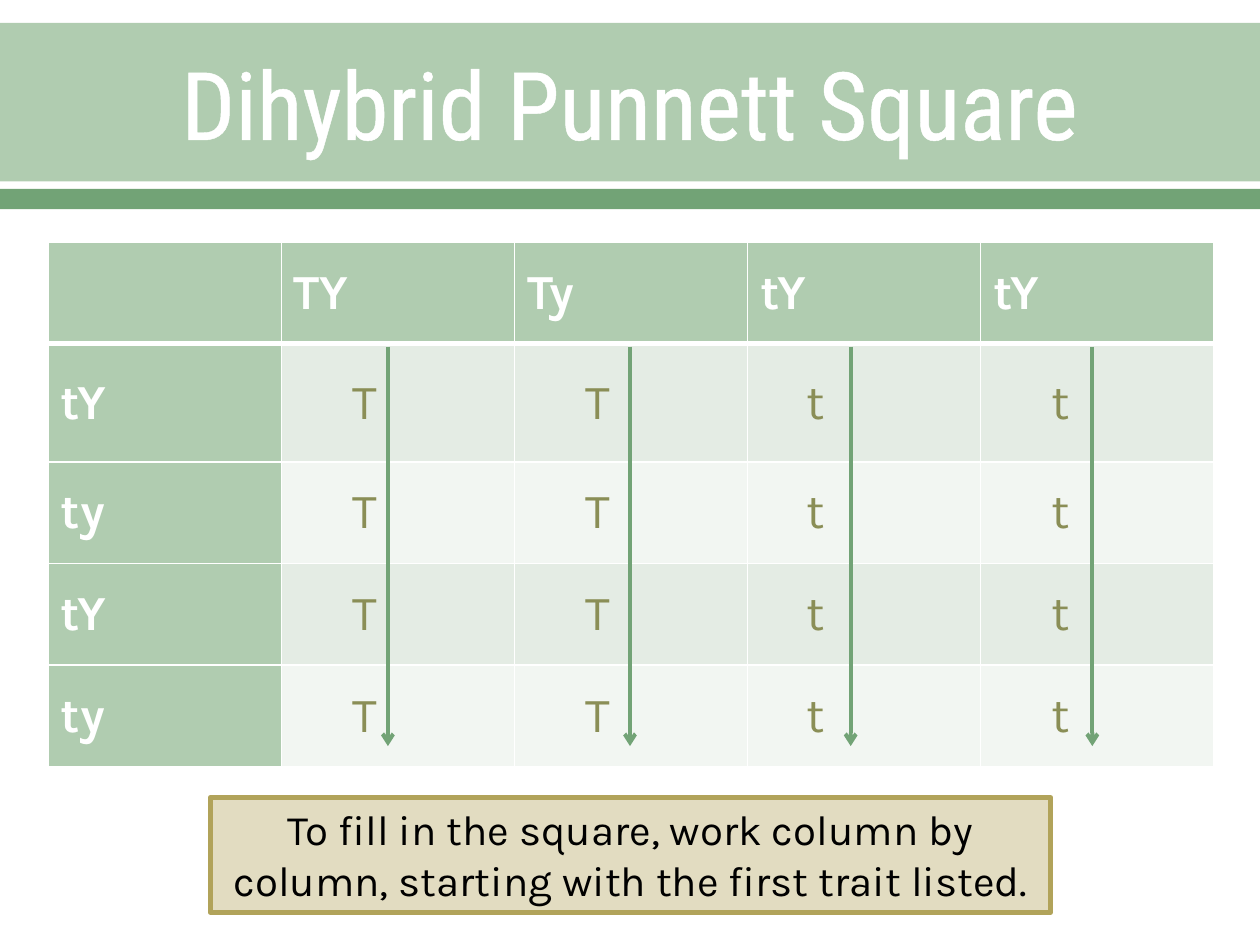
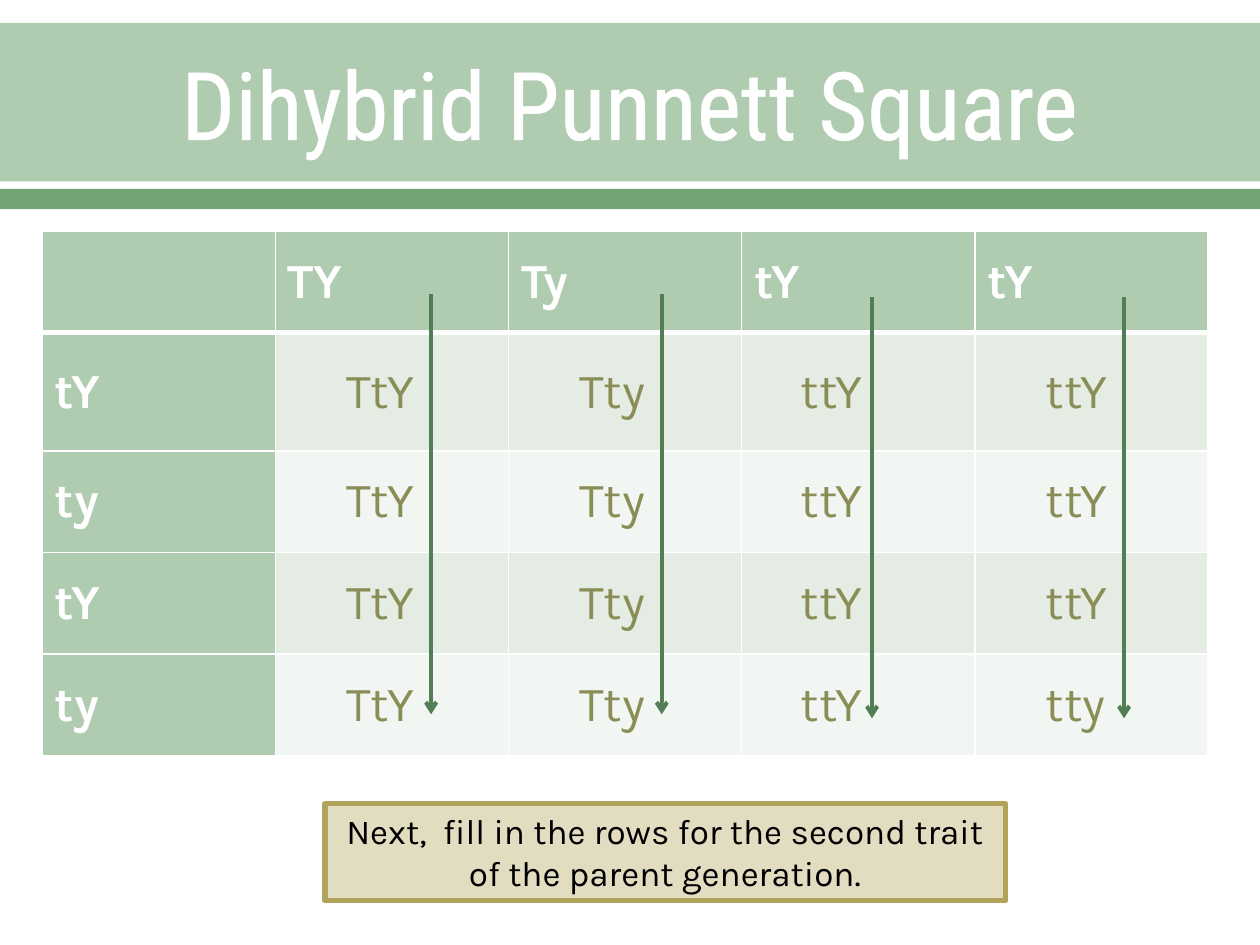
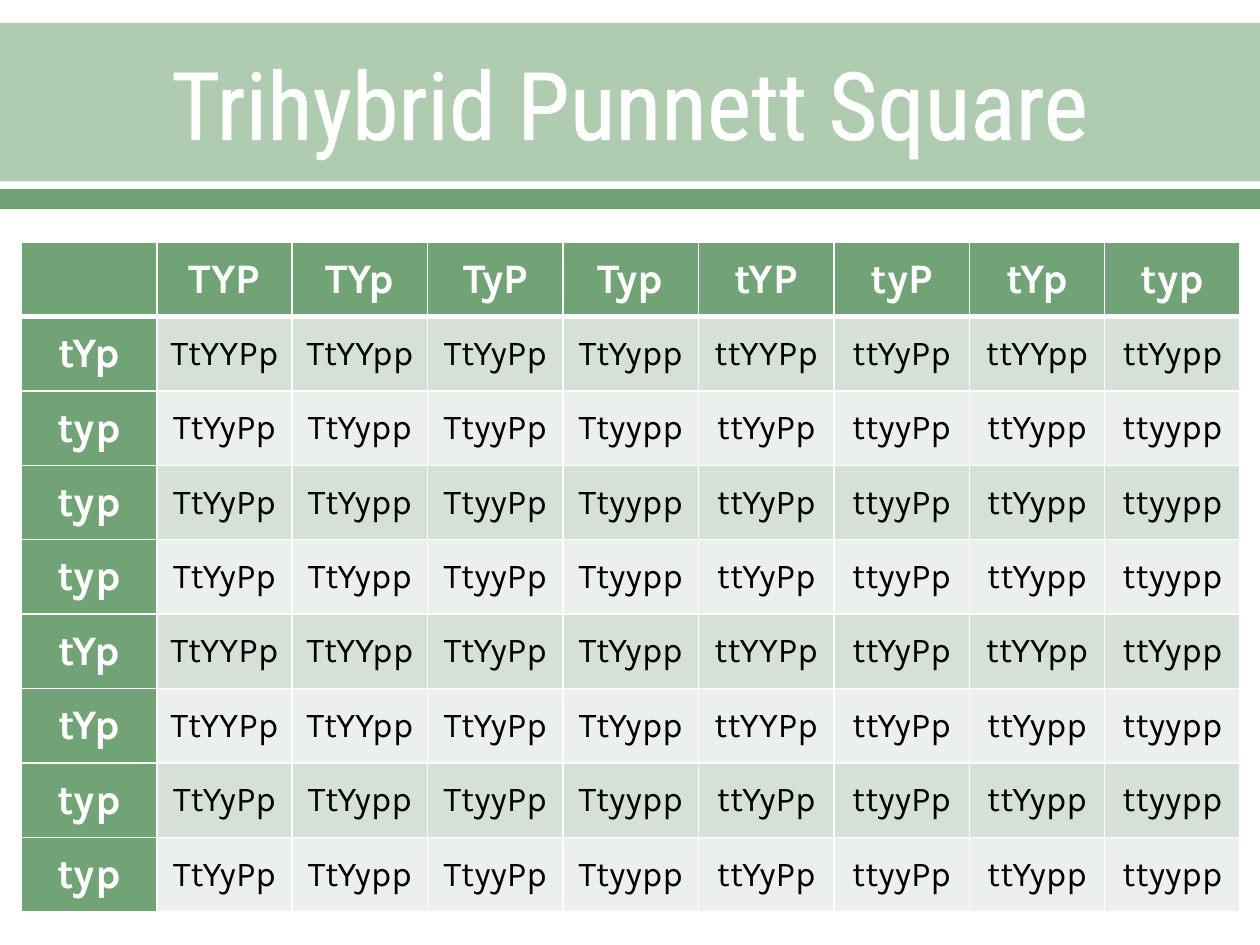
from dataclasses import dataclass

from lxml.etree import SubElement
from pptx import Presentation
from pptx.dml.color import RGBColor
from pptx.enum.shapes import MSO_CONNECTOR as Connector, MSO_SHAPE as Shape
from pptx.enum.text import MSO_ANCHOR as Anchor, MSO_AUTO_SIZE as AutoSize, PP_ALIGN as Align
from pptx.oxml import parse_xml
from pptx.oxml.ns import nsdecls, qn
from pptx.util import Cm, Pt


@dataclass(frozen=True)
class Theme:
    white: str = "FFFFFF"
    black: str = "000000"
    sage: str = "B0CCB0"
    green: str = "72A376"
    dark_green: str = "527E56"
    olive: str = "8A8E56"
    sand: str = "E2DCC1"
    gold: str = "B1A35A"
    sage_stripes: tuple = ("E4ECE4", "F2F6F2")
    green_stripes: tuple = ("D5E0D6", "EBF0EC")
    heading_font: str = "Roboto Condensed"
    body_font: str = "Karla"
    title_size: int = 54
    large_size: int = 28
    medium_size: int = 24
    small_size: int = 20


theme = Theme()


def style_para(para, size, color, bold=False, align=None, name=theme.body_font):
    para.alignment = align
    para.font.name = name
    para.font.size = Pt(size)
    para.font.bold = bold
    para.font.color.rgb = RGBColor.from_string(color)


def add_punnett_square(page, left, top, widths, heights, rows, head_fill, stripes,
                       head_size, body_size, body_color, align=None, indents=None):
    """Add a table whose first row and column hold gametes; indents shift body text by column."""
    table = page.shapes.add_table(len(rows), len(rows[0]), Cm(left), Cm(top),
                                  Cm(sum(widths)), Cm(sum(heights))).table
    table.first_col = True
    for column, width in zip(table.columns, widths):
        column.width = Cm(width)
    for row, height in zip(table.rows, heights):
        row.height = Cm(height)
    for r, texts in enumerate(rows):
        for c, text in enumerate(texts):
            cell = table.cell(r, c)
            is_head = r == 0 or c == 0
            cell.vertical_anchor = Anchor.MIDDLE
            cell.fill.solid()
            cell.fill.fore_color.rgb = RGBColor.from_string(
                head_fill if is_head else stripes[(r - 1) % 2])
            if indents and not is_head:
                cell.margin_left = Cm(indents[c - 1])
            if text:
                cell.text = text
                style_para(cell.text_frame.paragraphs[0],
                           head_size if is_head else body_size,
                           theme.white if is_head else body_color, is_head, align)
            cell_props = cell._tc.get_or_add_tcPr()
            for i, side in enumerate("LRTB"):
                thick = (r, side) in ((0, "B"), (1, "T"))
                cell_props.insert(i, parse_xml(
                    f'<a:ln{side} {nsdecls("a")} w="{Pt(3 if thick else 1)}"><a:solidFill>'
                    f'<a:srgbClr val="{theme.white}"/></a:solidFill></a:ln{side}>'))


deck = Presentation()
deck.slide_width, deck.slide_height = Cm(25.4), Cm(19.05)
layout = deck.slide_layouts[5]

titles = ["Dihybrid Punnett Square", "Dihybrid Punnett Square", "Trihybrid Punnett Square"]
pages = [deck.slides.add_slide(layout) for _ in titles]

# Bands shared by every slide live on the layout
for i, (top, height, color) in enumerate([(0.46, 3.2, theme.sage), (3.81, 0.41, theme.green)]):
    band = pages[0].shapes.add_shape(Shape.RECTANGLE, 0, Cm(top), deck.slide_width, Cm(height))
    band.shadow.inherit = False
    band.fill.solid()
    band.fill.fore_color.rgb = RGBColor.from_string(color)
    band.line.fill.background()
    band.element.nvSpPr.cNvPr.set("id", str(20 + i))
    layout.shapes.element.insert(2 + i, band.element)

for page, text in zip(pages, titles):
    title = page.shapes.title
    title.left, title.top, title.width, title.height = Cm(1.27), Cm(0.51), Cm(22.86), Cm(3.1)
    title.text = text
    title.text_frame.vertical_anchor = Anchor.MIDDLE
    para = title.text_frame.paragraphs[0]
    style_para(para, theme.title_size, theme.white, align=Align.CENTER, name=theme.heading_font)
    para._p.pPr.find(qn("a:defRPr")).insert(0, parse_xml(
        f'<a:ln {nsdecls("a")} w="{Pt(1.1)}"><a:solidFill>'
        f'<a:srgbClr val="{theme.white}"/></a:solidFill></a:ln>'))

# Dihybrid squares: one repeated entry per column, arrows down, a note below
header = ["", "TY", "Ty", "tY", "tY"]
row_gametes = ["tY", "ty", "tY", "ty"]
first_trait = [header] + [[gamete, "T", "T", "t", "t"] for gamete in row_gametes]
second_trait = [header] + [[gamete, "TtY", "Tty", "ttY", "ttY"] for gamete in row_gametes]
second_trait[-1][-1] = "tty"

# Each step: rows, table corner, arrow colour, arrows (x, top, bottom), note box, size, text
dihybrid_steps = [
    (first_trait, (0.97, 4.88), theme.green,
     [(x, 6.99, 15.04) for x in (7.82, 12.7, 17.15, 22.02)],
     (4.24, 16.08, 16.94, 2.31), theme.medium_size,
     "To fill in the square, work column by column, starting with the first trait listed."),
    (second_trait, (0.85, 4.66), theme.dark_green,
     [(8.69, 5.92, 14.4), (13.34, 5.92, 14.4), (17.58, 5.99, 14.48), (22.66, 5.99, 14.48)],
     (6.55, 16.2, 13.72, 1.96), theme.small_size,
     "Next,  fill in the rows for the second trait of the parent generation."),
]
for page, (rows, corner, arrow_color, arrows, note_area, note_size, note) in zip(
        pages, dihybrid_steps):
    add_punnett_square(page, *corner, [4.7] * 5, [2.05, 2.38, 2.05, 2.05, 2.05], rows,
                       theme.sage, theme.sage_stripes, theme.large_size, theme.large_size,
                       theme.olive, indents=[1.43, 1.43, 1.19, 1.43])

    for x, top, bottom in arrows:
        arrow = page.shapes.add_connector(Connector.STRAIGHT, Cm(x), Cm(top), Cm(x), Cm(bottom))
        arrow.line.color.rgb = RGBColor.from_string(arrow_color)
        arrow.line.width = Pt(2.25)
        SubElement(arrow.line._get_or_add_ln(), qn("a:tailEnd"), type="arrow")
        SubElement(arrow.element.spPr, qn("a:effectLst"))

    box = page.shapes.add_shape(Shape.RECTANGLE, *map(Cm, note_area))
    box.shadow.inherit = False
    box.fill.solid()
    box.fill.fore_color.rgb = RGBColor.from_string(theme.sand)
    box.line.color.rgb = RGBColor.from_string(theme.gold)
    box.line.width = Pt(3)
    frame = box.text_frame
    frame.word_wrap = True
    frame.auto_size = AutoSize.SHAPE_TO_FIT_TEXT
    frame.vertical_anchor = Anchor.TOP
    frame.text = note
    style_para(frame.paragraphs[0], note_size, theme.black, align=Align.CENTER)

# Trihybrid square: pair the alleles of both gametes, dominant letter first
column_gametes = ["TYP", "TYp", "TyP", "Typ", "tYP", "tyP", "tYp", "typ"]
trihybrid = [["", *column_gametes]]
for row_gamete in ["tYp", "typ", "typ", "typ", "tYp", "tYp", "typ", "typ"]:
    crosses = ["".join("".join(sorted(pair)) for pair in zip(gamete, row_gamete))
               for gamete in column_gametes]
    trihybrid.append([row_gamete, *crosses])
trihybrid[6][-2:] = ["ttYypp", "ttyypp"]  # this row departs from the rule

add_punnett_square(pages[2], 0.43, 4.88, [2.73] * 9, [1.5] * 9, trihybrid,
                   theme.green, theme.green_stripes, theme.medium_size, theme.small_size,
                   theme.black, align=Align.CENTER)

deck.save("out.pptx")
